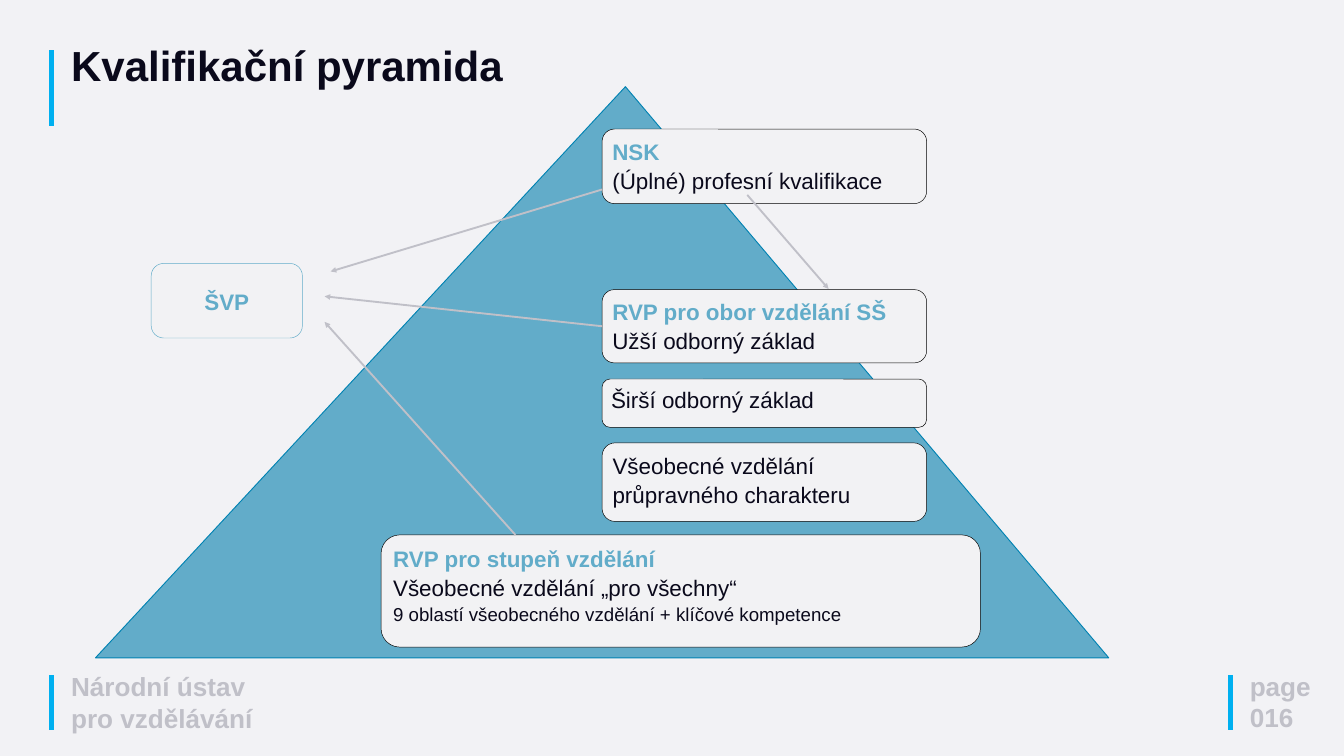
from pptx import Presentation
from pptx.dml.color import RGBColor
from pptx.enum import shapes, text
from pptx.oxml.ns import qn
from pptx.util import Inches, Pt
from lxml import etree

COLORS = {
    "background": "F2F2F5", "box": "F2F2F4", "pyramid": "62ACC9", "edge": "0082B2",
    "accent": "00B0F0", "ink": "0A091B", "muted": "C0C0C8", "outline": "000000",
}
HEADING = (24, "pyramid", True)
BODY = (24, "ink", False)
DETAIL = (20, "ink", False)
TITLE = (45, "ink", True)
FOOTER = (28, "muted", True)

LABELS = [
    ((0.96, 9.93, 3.04, 1.04), [("Národní ústav pro vzdělávání", FOOTER)], 1),
    ((0.96, 0.62, 7.21, 1.46), [("Kvalifikační pyramida", TITLE)], 0.9),
    ((18.5, 9.92, 1.4, 1.04), [("page", FOOTER), ("016", FOOTER)], 1),
]
ACCENT_BARS = [(0.77, 0.75, 1.88), (0.77, 10.05, 10.86), (18.31, 10.05, 10.86)]

COLUMN_LEFT, COLUMN_WIDTH = 8.96, 4.83
LEVELS = {
    "stage": ((5.67, 7.96, 8.92, 1.67), [
        ("RVP pro stupeň vzdělání", HEADING),
        ("Všeobecné vzdělání „pro všechny“", BODY),
        ("9 oblastí všeobecného vzdělání + klíčové kompetence", DETAIL)]),
    "general": ((COLUMN_LEFT, 6.59, COLUMN_WIDTH, 1.17), [
        ("Všeobecné vzdělání", BODY), ("průpravného charakteru", BODY)]),
    "broader": ((COLUMN_LEFT, 5.64, COLUMN_WIDTH, 0.72), [("Širší odborný základ", BODY)]),
    "field": ((COLUMN_LEFT, 4.31, COLUMN_WIDTH, 1.09), [
        ("RVP pro obor vzdělání SŠ", HEADING), ("Užší odborný základ", BODY)]),
    "nsk": ((COLUMN_LEFT, 1.92, COLUMN_WIDTH, 1.11), [
        ("NSK", HEADING), ("(Úplné) profesní kvalifikace", BODY)]),
}
SCHOOL_PROGRAMME = ((2.25, 3.92, 2.25, 1.11), [("ŠVP", HEADING)])
ARROWS = [
    ((8.96, 2.82), (4.92, 4.04), None),
    ((8.96, 4.86), (4.83, 4.41), "field"),
    ((7.67, 7.96), (4.83, 4.79), None),
    ((11.12, 2.9), (12.33, 4.3), None),
]


def color(name):
    return RGBColor.from_string(COLORS[name])


def write(frame, lines, spacing, align=text.PP_ALIGN.LEFT, anchor=text.MSO_ANCHOR.TOP):
    frame.word_wrap = True
    frame.vertical_anchor = anchor
    frame.text = "\n".join(words for words, _ in lines)
    for paragraph, (_, (size, ink, bold)) in zip(frame.paragraphs, lines):
        paragraph.alignment = align
        paragraph.line_spacing = spacing
        font = paragraph.runs[0].font
        font.name, font.size, font.bold = "Arial", Pt(size), bold
        font.color.rgb = color(ink)


def add_block(slide, preset, place, fill, line, width):
    block = slide.shapes.add_shape(preset, *map(Inches, place))
    block.shadow.inherit = False
    block.fill.solid()
    block.fill.fore_color.rgb = color(fill)
    block.line.color.rgb = color(line)
    block.line.width = Pt(width)
    return block


def add_box(slide, place, lines, line="outline", **layout):
    box = add_block(slide, shapes.MSO_SHAPE.ROUNDED_RECTANGLE, place, "box", line, 0.5)
    write(box.text_frame, lines, 1.07, **layout)
    return box


def add_line(slide, start, end, ink, width):
    line = slide.shapes.add_connector(
        shapes.MSO_CONNECTOR.STRAIGHT, *map(Inches, (*start, *end)))
    line.line.color.rgb = color(ink)
    line.line.width = Pt(width)
    etree.SubElement(line._element.spPr, qn("a:effectLst"))
    return line


def main():
    deck = Presentation()
    deck.slide_width, deck.slide_height = Inches(20), Inches(11.25)
    slide = deck.slides.add_slide(deck.slide_layouts[6])
    slide.background.fill.solid()
    slide.background.fill.fore_color.rgb = color("background")

    for x, top, bottom in ACCENT_BARS:
        add_line(slide, (x, top), (x, bottom), "accent", 5)
    for place, lines, spacing in LABELS:
        label = slide.shapes.add_textbox(*map(Inches, place))
        write(label.text_frame, lines, spacing)

    pyramid = add_block(slide, shapes.MSO_SHAPE.ISOSCELES_TRIANGLE,
                        (1.42, 1.29, 15.08, 8.5), "pyramid", "edge", 1)
    pyramid.adjustments[0] = 0.523

    levels = {name: add_box(slide, *level) for name, level in LEVELS.items()}
    add_box(slide, *SCHOOL_PROGRAMME, line="pyramid",
            align=text.PP_ALIGN.CENTER, anchor=text.MSO_ANCHOR.MIDDLE)

    for start, end, source in ARROWS:
        arrow = add_line(slide, start, end, "muted", 2)
        etree.SubElement(arrow.line._get_or_add_ln(), qn("a:tailEnd"), type="triangle")
        if source:
            arrow.begin_connect(levels[source], 1)

    deck.save("out.pptx")


if __name__ == "__main__":
    main()
